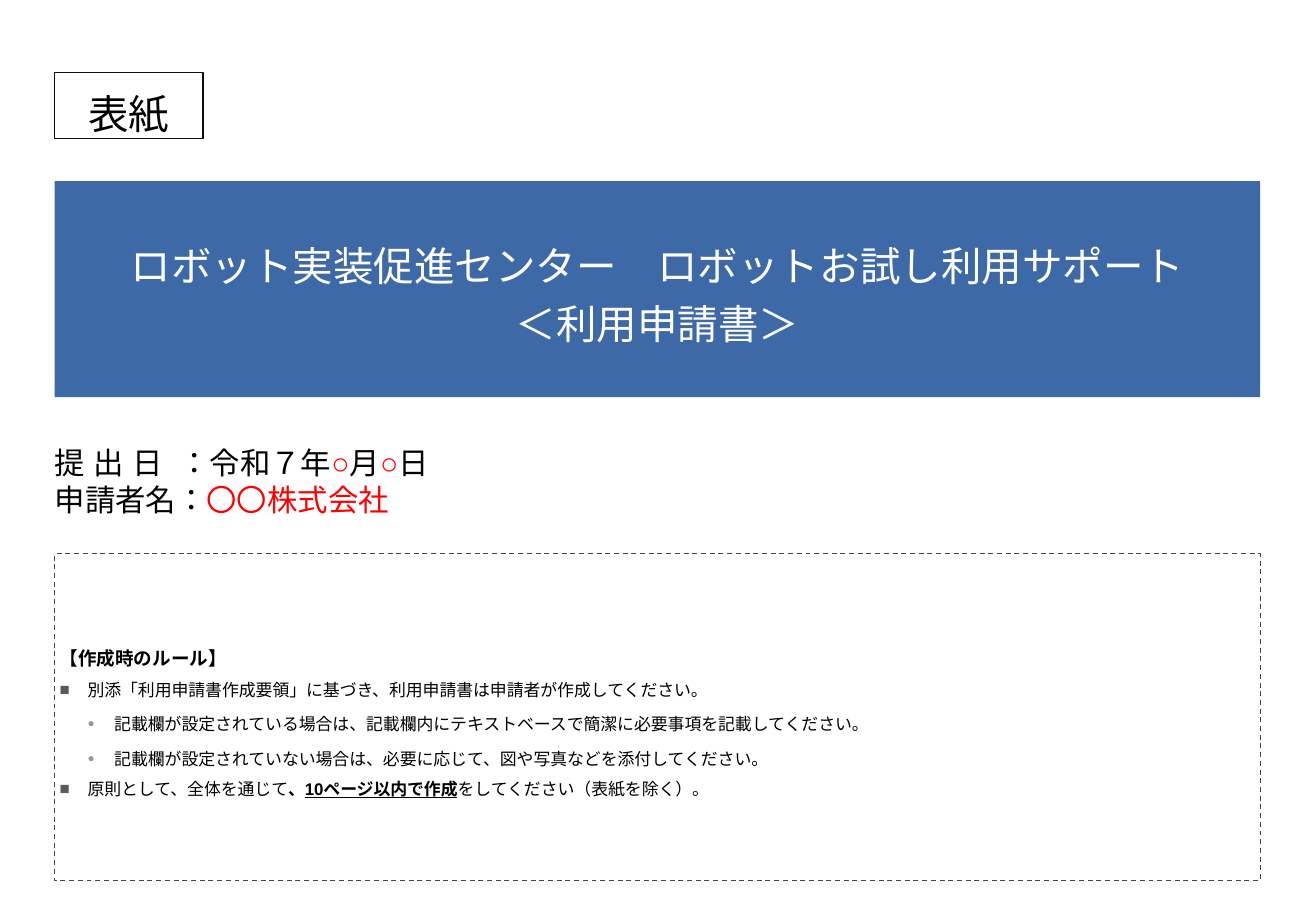
from lxml.etree import SubElement
from pptx import Presentation
from pptx.dml.color import RGBColor
from pptx.enum.dml import MSO_LINE_DASH_STYLE as Dash
from pptx.enum.lang import MSO_LANGUAGE_ID as Language
from pptx.enum.shapes import MSO_SHAPE as Preset
from pptx.enum.text import MSO_ANCHOR as Anchor, MSO_AUTO_SIZE as AutoSize, PP_ALIGN as Align
from pptx.oxml.ns import qn
from pptx.util import Inches, Pt

FONT = "Arial"
BLACK, WHITE, RED, BLUE = "000000", "FFFFFF", "FF0000", "3D6AA7"
LEFT, FULL_WIDTH = 4.16, 91.6


def rgb(value):
    return RGBColor.from_string(value)


def add_text(paragraph, text, size=10, color=BLACK, bold=False, underline=False):
    """Append text to a paragraph; a newline becomes a line break."""
    for index, line in enumerate(text.split("\n")):
        if index:
            paragraph.add_line_break()
        run = paragraph.add_run()
        run.text = line
        font = run.font
        font.name, font.size = FONT, Pt(size)
        font.bold, font.underline = bold, underline
        font.language_id = Language.JAPANESE
        font.color.rgb = rgb(color)
        SubElement(font._element, qn("a:ea"), typeface=FONT)


def set_indent(paragraph, margin, hanging):
    properties = paragraph._p.get_or_add_pPr()
    properties.set("marL", str(Inches(margin)))
    properties.set("indent", str(-Inches(hanging)))


def set_bullet(paragraph, character, color, percent=100):
    properties = paragraph._p.get_or_add_pPr()
    bullet_color = SubElement(properties, qn("a:buClr"))
    SubElement(bullet_color, qn("a:srgbClr"), val=color)
    SubElement(properties, qn("a:buSzPct"), val=str(percent * 1000))
    SubElement(properties, qn("a:buFont"), typeface=FONT)
    SubElement(properties, qn("a:buChar"), char=character)


class CoverSlide:
    """Places elements by percentages of the slide's width and height."""

    def __init__(self, presentation):
        self.width = presentation.slide_width
        self.height = presentation.slide_height
        self.shapes = presentation.slides.add_slide(presentation.slide_layouts[6]).shapes

    def area(self, top, width, height):
        return [int(share * length / 100) for share, length in (
            (LEFT, self.width), (top, self.height),
            (width, self.width), (height, self.height))]

    def frame(self, shape, insets, anchor=Anchor.TOP, wrap=True, grow=False):
        frame = shape.text_frame
        (frame.margin_left, frame.margin_top,
         frame.margin_right, frame.margin_bottom) = map(Inches, insets)
        frame.vertical_anchor, frame.word_wrap = anchor, wrap
        frame.auto_size = AutoSize.SHAPE_TO_FIT_TEXT if grow else AutoSize.NONE
        return frame

    def box(self, top, width, height, fill=None, line=None, dash=None):
        shape = self.shapes.add_shape(Preset.RECTANGLE, *self.area(top, width, height))
        shape.shadow.inherit = False
        if fill:
            shape.fill.solid()
            shape.fill.fore_color.rgb = rgb(fill)
        else:
            shape.fill.background()
        if line:
            shape.line.color.rgb = rgb(line)
            shape.line.width = Pt(0.75)
            shape.line.dash_style = dash
        else:
            shape.line.fill.background()
        return shape

    def heading(self, text, shape, color, **frame_format):
        paragraph = self.frame(shape, **frame_format).paragraphs[0]
        paragraph.alignment = Align.CENTER
        paragraph.line_spacing = 1.2
        paragraph.space_before = Pt(12)
        add_text(paragraph, text, size=24, color=color)

    def applicant(self, lines, top, height):
        text_box = self.shapes.add_textbox(*self.area(top, FULL_WIDTH, height))
        frame = self.frame(text_box, (0, 0.04, 0, 0.05), grow=True)
        for index, parts in enumerate(lines):
            paragraph = frame.add_paragraph() if index else frame.paragraphs[0]
            set_indent(paragraph, 0.29, 0.29)
            for text, color in parts:
                add_text(paragraph, text, size=18, color=color)

    def rules(self, title, items, top, height):
        shape = self.box(top, FULL_WIDTH, height, line="444444", dash=Dash.DASH)
        frame = self.frame(shape, [0.04] * 4, Anchor.MIDDLE)
        paragraph = frame.paragraphs[0]
        paragraph.alignment, paragraph.line_spacing = Align.LEFT, 1.5
        add_text(paragraph, title, size=11, bold=True)
        for level, parts in items:
            paragraph = frame.add_paragraph()
            paragraph.alignment, paragraph.level = Align.LEFT, level
            if level:
                paragraph.line_spacing = 1.7
                set_indent(paragraph, 0.45, 0.22)
                set_bullet(paragraph, "●", "969696", 70)
            else:
                paragraph.line_spacing = 1.5
                set_indent(paragraph, 0.23, 0.23)
                set_bullet(paragraph, "■", "5A5A5A")
            for text, text_format in parts:
                add_text(paragraph, text, **text_format)


def main():
    presentation = Presentation()
    presentation.slide_width, presentation.slide_height = Inches(10.83), Inches(7.5)
    cover = CoverSlide(presentation)

    cover.applicant([
        [("提 出 日  ：令和７年", BLACK), ("○", RED), ("月", BLACK), ("○", RED), ("日", BLACK)],
        [("申請者名：", BLACK), ("〇〇株式会社", RED)],
    ], top=48.27, height=9.33)

    cover.rules("【作成時のルール】", [
        (0, [("別添「利用申請書作成要領」に基づき、利用申請書は申請者が作成してください。", {})]),
        (1, [("記載欄が設定されている場合は、記載欄内にテキストベースで簡潔に必要事項を記載してください。", {})]),
        (1, [("記載欄が設定されていない場合は、必要に応じて、図や写真などを添付してください。", {})]),
        (0, [("原則として、全体を通じて", {}),
             ("、", {"bold": True}),
             ("10ページ以内で作成", {"bold": True, "underline": True}),
             ("をしてください（表紙を除く）。", {})]),
    ], top=60.8, height=35.87)

    cover.heading("表紙", cover.box(8, 11.27, 7.2, line="0D0D0D"), BLACK,
                  insets=(0.1, 0.05, 0.1, 0.05), grow=True)
    cover.heading("ロボット実装促進センター　ロボットお試し利用サポート\n＜利用申請書＞",
                  cover.box(19.87, FULL_WIDTH, 23.73, fill=BLUE), WHITE,
                  insets=[0.02] * 4, anchor=Anchor.MIDDLE, wrap=False)

    presentation.save("out.pptx")


if __name__ == "__main__":
    main()
